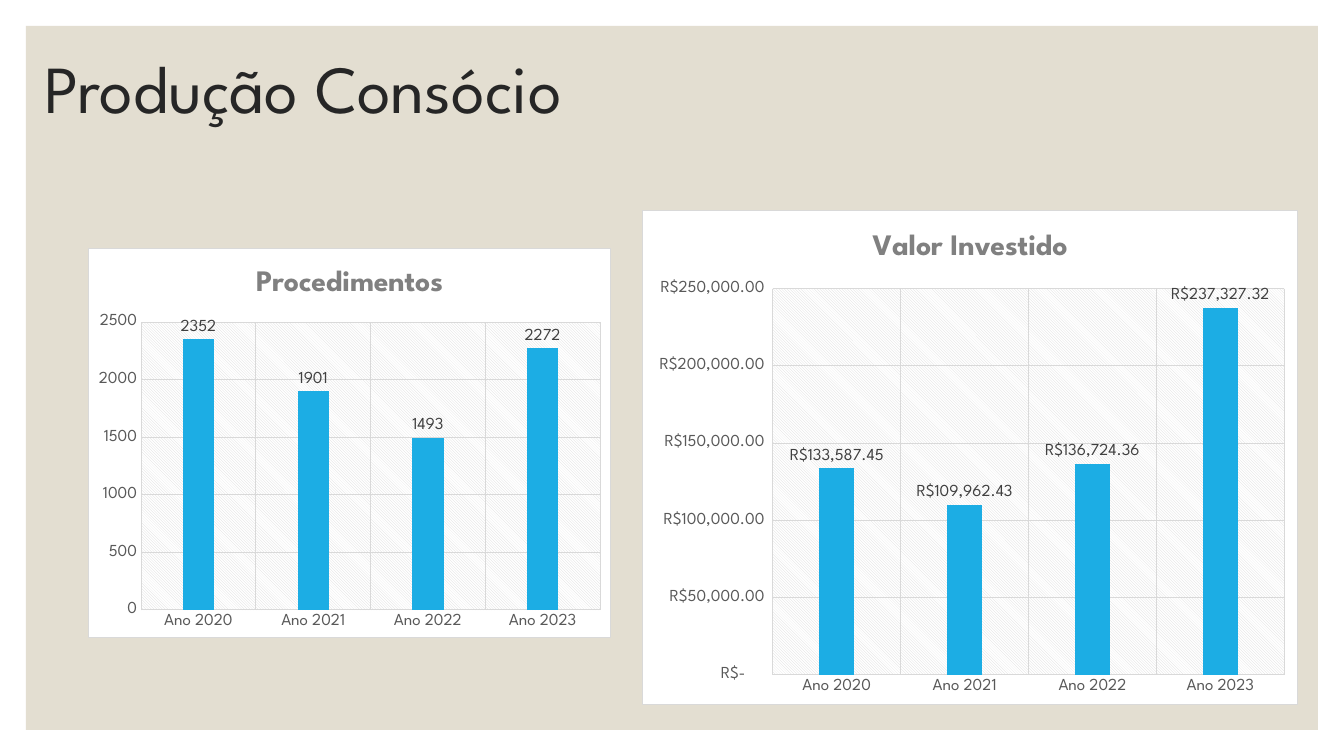
from lxml import etree
from pptx import Presentation
from pptx.chart.data import CategoryChartData
from pptx.dml.color import RGBColor
from pptx.enum.chart import XL_CHART_TYPE as ChartType, XL_LABEL_POSITION as LabelPosition
from pptx.enum.chart import XL_TICK_MARK as TickMark
from pptx.enum.shapes import MSO_SHAPE as Shape
from pptx.enum.text import MSO_ANCHOR as Anchor, MSO_AUTO_SIZE as AutoSize, PP_ALIGN as Align
from pptx.oxml import parse_xml
from pptx.util import Pt

PX = 914400 / 100.8
FONT = "League Spartan"
WHITE = RGBColor(0xFF, 0xFF, 0xFF)
BEIGE = RGBColor(0xE3, 0xDE, 0xD1)
INK = RGBColor(0x26, 0x26, 0x26)
BLUE = RGBColor(0x1C, 0xAD, 0xE4)
GRID = RGBColor(0xD9, 0xD9, 0xD9)
TITLE_GRAY = RGBColor(0x80, 0x80, 0x80)
AXIS_GRAY = RGBColor(0x59, 0x59, 0x59)
LABEL_GRAY = RGBColor(0x40, 0x40, 0x40)
REAIS = '_("R$"* #,##0.00_);_("R$"* \\(#,##0.00\\);_("R$"* "-"??_);_(@_)'
YEARS = ["Ano 2020", "Ano 2021", "Ano 2022", "Ano 2023"]
CHARTS = [
    ("Procedimentos", (88, 248, 523, 390), "General", 2500, 500,
     (2352, 1901, 1493, 2272)),
    ("Valor Investido", (642, 210, 656, 495), REAIS, 250000, 50000,
     (133587.45, 109962.43, 136724.36, 237327.32)),
]
NAMESPACES = ('xmlns:c="http://schemas.openxmlformats.org/drawingml/2006/chart" '
              'xmlns:a="http://schemas.openxmlformats.org/drawingml/2006/main"')
CHART_AREA = f"""<c:spPr {NAMESPACES}>
  <a:solidFill><a:srgbClr val="{WHITE}"/></a:solidFill>
  <a:ln w="9525"><a:solidFill><a:srgbClr val="{GRID}"/></a:solidFill></a:ln>
</c:spPr>"""
PLOT_AREA = f"""<c:spPr {NAMESPACES}>
  <a:pattFill prst="ltDnDiag">
    <a:fgClr><a:srgbClr val="{GRID}"/></a:fgClr>
    <a:bgClr><a:srgbClr val="{WHITE}"/></a:bgClr>
  </a:pattFill>
  <a:ln><a:noFill/></a:ln>
</c:spPr>"""


def px(*lengths):
    return [round(length * PX) for length in lengths]


def set_font(font, size, color, bold=False):
    for name, value in {"name": FONT, "size": Pt(size), "bold": bold}.items():
        setattr(font, name, value)
    font.color.rgb = color


presentation = Presentation()
presentation.slide_width, presentation.slide_height = px(1344, 756)
slide = presentation.slides.add_slide(presentation.slide_layouts[5])

panel = slide.shapes.add_shape(Shape.RECTANGLE, *px(26, 26, 1292, 704))
panel.shadow.inherit = False
panel.fill.solid()
panel.fill.fore_color.rgb = BEIGE
panel.line.fill.background()

title = slide.shapes.title
title._element.addprevious(panel._element)
title.left, title.top, title.width, title.height = px(34, 16, 1109, 151)
title.text_frame.text = "Produção Consócio"
title.text_frame.vertical_anchor = Anchor.MIDDLE
title.text_frame.auto_size = AutoSize.NONE
paragraph = title.text_frame.paragraphs[0]
paragraph.alignment = Align.LEFT
paragraph.line_spacing = 0.9
set_font(paragraph.runs[0].font, 48, INK)

for name, box, number_format, maximum, unit, values in CHARTS:
    data = CategoryChartData(number_format=number_format)
    data.categories = YEARS
    data.add_series(name, values)
    chart = slide.shapes.add_chart(ChartType.COLUMN_CLUSTERED, *px(*box), data).chart
    chart.has_legend = False
    set_font(chart.font, 10, RGBColor(0, 0, 0))
    chart.has_title = True
    chart.chart_title.include_in_layout = False
    chart.chart_title.text_frame.text = name
    set_font(chart.chart_title.text_frame.paragraphs[0].runs[0].font, 21.3, TITLE_GRAY, True)

    for axis in (chart.category_axis, chart.value_axis):
        axis.major_tick_mark = axis.minor_tick_mark = TickMark.NONE
        set_font(axis.tick_labels.font, 12, AXIS_GRAY)
        axis.has_major_gridlines = True
        for line in (axis.major_gridlines.format.line, axis.format.line):
            line.color.rgb = GRID
            line.width = Pt(0.75)
    axis_format = {"minimum_scale": 0, "maximum_scale": maximum, "major_unit": unit}
    for attribute, value in axis_format.items():
        setattr(chart.value_axis, attribute, value)
    chart.value_axis.format.line.fill.background()

    plot = chart.plots[0]
    plot.gap_width = 267
    plot.overlap = -43
    plot.vary_by_categories = False
    plot.series[0].format.fill.solid()
    plot.series[0].format.fill.fore_color.rgb = BLUE
    labels = plot.series[0].data_labels
    labels.show_value = True
    labels.position = LabelPosition.OUTSIDE_END
    set_font(labels.font, 12, LABEL_GRAY)
    for numbers in (labels, chart.value_axis.tick_labels):
        numbers.number_format = number_format
        numbers.number_format_is_linked = False

    chart_space = chart.element
    chart_space.chart.addnext(parse_xml(CHART_AREA))
    chart_space.chart.plotArea.append(parse_xml(PLOT_AREA))

presentation.save("out.pptx")
